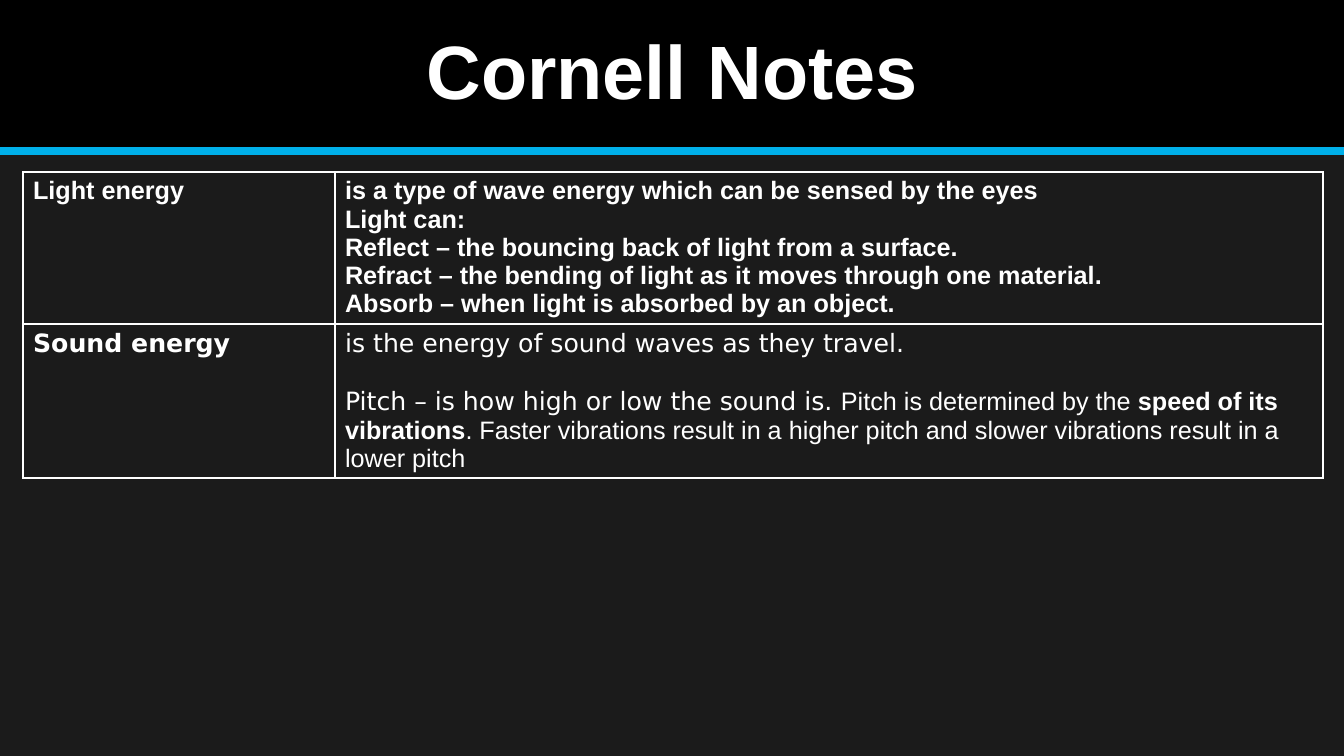
from dataclasses import dataclass

from lxml.etree import SubElement
from pptx import Presentation
from pptx.dml.color import RGBColor
from pptx.enum.shapes import MSO_CONNECTOR, MSO_SHAPE
from pptx.enum.text import MSO_ANCHOR, PP_ALIGN
from pptx.oxml import parse_xml
from pptx.oxml.ns import nsdecls, qn
from pptx.slide import Slide
from pptx.table import _Cell
from pptx.util import Emu, Pt

COLORS = {"background": "1B1B1B", "header": "000000", "accent": "00B0EA", "text": "FFFFFF"}
SANS = "Arial"
WIDE_SANS = "DejaVu Sans"
SLIDE_WIDTH, SLIDE_HEIGHT = 1344, 756
HEADER_HEIGHT = 151
TABLE_LEFT, TABLE_TOP = 23, 172
COLUMN_WIDTHS = (312, 988)
ROW_HEIGHTS = (152, 154)


@dataclass(frozen=True)
class TextRun:
    text: str
    bold: bool = True
    font: str = SANS


@dataclass(frozen=True)
class Line:
    runs: tuple[TextRun, ...]
    space_before: float = 0


@dataclass(frozen=True)
class Note:
    cue: Line
    details: tuple[Line, ...]


NOTES = (
    Note(
        Line((TextRun("Light energy"),)),
        tuple(Line((TextRun(text),)) for text in (
            "is a type of wave energy which can be sensed by the eyes",
            "Light can:",
            "Reflect – the bouncing back of light from a surface.",
            "Refract – the bending of light as it moves through one material.",
            "Absorb – when light is absorbed by an object.",
        )),
    ),
    Note(
        Line((TextRun("Sound energy", font=WIDE_SANS),)),
        (
            Line((TextRun("is the energy of sound waves as they travel.", False, WIDE_SANS),)),
            Line((
                TextRun("Pitch – is how high or low the sound is. ", False, WIDE_SANS),
                TextRun("Pitch is determined by the ", False),
                TextRun("speed of its vibrations"),
                TextRun(". Faster vibrations result in a higher pitch and slower "
                        "vibrations result in a lower pitch", False),
            ), space_before=20.5),
        ),
    ),
)


def px(length: int) -> Emu:
    return Emu(round(length * 914400 / 100.8))


def color(name: str) -> RGBColor:
    return RGBColor.from_string(COLORS[name])


def format_font(font, name: str, size: int, bold: bool) -> None:
    font.name, font.size, font.bold = name, Pt(size), bold
    font.color.rgb = color("text")


def draw_header(slide: Slide) -> None:
    band = slide.shapes.add_shape(MSO_SHAPE.RECTANGLE, 0, 0, px(SLIDE_WIDTH), px(HEADER_HEIGHT))
    band.shadow.inherit = False
    band.fill.solid()
    band.fill.fore_color.rgb = color("header")
    band.line.fill.background()

    rule = slide.shapes.add_connector(
        MSO_CONNECTOR.STRAIGHT, 0, px(HEADER_HEIGHT), px(SLIDE_WIDTH), px(HEADER_HEIGHT))
    rule.line.color.rgb = color("accent")
    rule.line.width = Pt(6)
    SubElement(rule._element.spPr, qn("a:effectLst"))


def draw_title(slide: Slide, text: str) -> None:
    title = slide.shapes.title
    title.left, title.top, title.width, title.height = px(118), px(14), px(1109), px(121)
    frame = title.text_frame
    frame.text = text
    frame.vertical_anchor = MSO_ANCHOR.MIDDLE
    paragraph = frame.paragraphs[0]
    paragraph.alignment = PP_ALIGN.CENTER
    paragraph.line_spacing = 0.9
    format_font(paragraph.runs[0].font, SANS, 54, True)
    # Bring the title in front of the header band
    slide.shapes._spTree.append(title._element)


def fill_cell(cell: _Cell, lines: tuple[Line, ...]) -> None:
    cell.fill.background()
    properties = cell._tc.get_or_add_tcPr()
    for position, side in enumerate(("lnL", "lnR", "lnT", "lnB")):
        properties.insert(position, parse_xml(
            f'<a:{side} {nsdecls("a")} w="{Pt(1)}"><a:solidFill>'
            f'<a:srgbClr val="{COLORS["text"]}"/></a:solidFill></a:{side}>'))

    frame = cell.text_frame
    for index, line in enumerate(lines):
        paragraph = frame.add_paragraph() if index else frame.paragraphs[0]
        paragraph.space_before = Pt(line.space_before)
        for text_run in line.runs:
            run = paragraph.add_run()
            run.text = text_run.text
            format_font(run.font, text_run.font, 18, text_run.bold)


def draw_notes(slide: Slide, notes: tuple[Note, ...]) -> None:
    table = slide.shapes.add_table(
        len(notes), len(COLUMN_WIDTHS), px(TABLE_LEFT), px(TABLE_TOP),
        px(sum(COLUMN_WIDTHS)), px(sum(ROW_HEIGHTS))).table
    table.first_row = table.horz_banding = False
    for column, width in zip(table.columns, COLUMN_WIDTHS):
        column.width = px(width)
    for index, (note, height) in enumerate(zip(notes, ROW_HEIGHTS)):
        table.rows[index].height = px(height)
        fill_cell(table.cell(index, 0), (note.cue,))
        fill_cell(table.cell(index, 1), note.details)


def main() -> None:
    presentation = Presentation()
    presentation.slide_width = px(SLIDE_WIDTH)
    presentation.slide_height = px(SLIDE_HEIGHT)
    slide = presentation.slides.add_slide(presentation.slide_layouts[5])
    slide.background.fill.solid()
    slide.background.fill.fore_color.rgb = color("background")

    # Header with title
    draw_header(slide)
    draw_title(slide, "Cornell Notes")

    # Two-column notes
    draw_notes(slide, NOTES)

    presentation.save("out.pptx")


if __name__ == "__main__":
    main()
